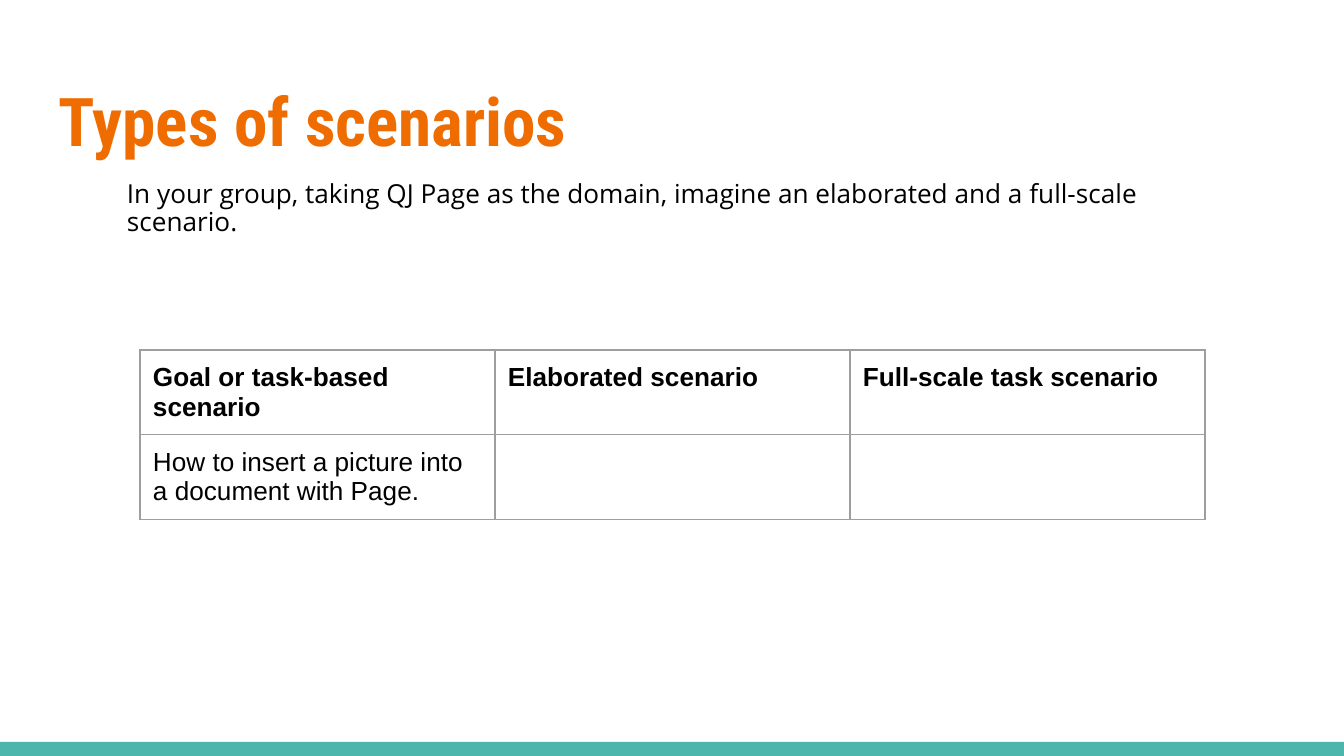
"""Build the slide on types of scenarios."""
from dataclasses import dataclass

from lxml.etree import SubElement
from pptx import Presentation
from pptx.dml.color import RGBColor
from pptx.enum.shapes import MSO_SHAPE
from pptx.enum.text import MSO_ANCHOR, MSO_AUTO_SIZE, PP_ALIGN
from pptx.oxml.ns import qn
from pptx.slide import Slide
from pptx.text.text import TextFrame
from pptx.util import Emu, Pt

ORANGE = RGBColor(0xEF, 0x6C, 0x00)
TEAL = RGBColor(0x4D, 0xB6, 0xAC)
BLACK = RGBColor(0x00, 0x00, 0x00)
GREY = RGBColor(0x9E, 0x9E, 0x9E)
PX_PER_INCH = 134.4
INSET = 13
COLUMN_WIDTH = 355
ROW_HEIGHT = 56
ROWS = (
    ("Goal or task-based scenario", "Elaborated scenario", "Full-scale task scenario"),
    ("How to insert a picture into a document with Page.", "", ""),
)


@dataclass(frozen=True)
class Box:
    left: int
    top: int
    width: int
    height: int

    def emu(self) -> tuple[Emu, Emu, Emu, Emu]:
        return px(self.left), px(self.top), px(self.width), px(self.height)


@dataclass(frozen=True)
class Style:
    font: str
    size: int
    color: RGBColor
    bold: bool = False
    spacing: float = 1.0


TITLE_STYLE = Style("Roboto Condensed", 36, ORANGE, bold=True)
TASK_STYLE = Style("Open Sans", 14, BLACK, spacing=0.9)
HEADER_STYLE = Style("Arial", 14, BLACK, bold=True)
CELL_STYLE = Style("Arial", 14, BLACK)


def px(length: int) -> Emu:
    return Emu(round(length * 914400 / PX_PER_INCH))


def write(frame: TextFrame, text: str, style: Style) -> None:
    frame.text = text
    frame.word_wrap = True
    for para in frame.paragraphs:
        para.alignment = PP_ALIGN.LEFT
        para.line_spacing = style.spacing
        para.font.size = Pt(style.size)
        for span in para.runs:
            span.font.name = style.font
            span.font.size = Pt(style.size)
            span.font.bold = style.bold
            span.font.color.rgb = style.color


def set_insets(target) -> None:
    target.margin_left = target.margin_right = px(INSET)
    target.margin_top = target.margin_bottom = px(INSET)
    target.vertical_anchor = MSO_ANCHOR.TOP


def add_bar(page: Slide, box: Box) -> None:
    bar = page.shapes.add_shape(MSO_SHAPE.RECTANGLE, *box.emu())
    bar.shadow.inherit = False
    bar.fill.solid()
    bar.fill.fore_color.rgb = TEAL
    bar.line.fill.background()


def add_title(page: Slide, box: Box, text: str) -> None:
    title = page.shapes.title
    title.left, title.top, title.width, title.height = box.emu()
    write(title.text_frame, text, TITLE_STYLE)
    title.text_frame.auto_size = MSO_AUTO_SIZE.NONE
    set_insets(title.text_frame)


def add_task(page: Slide, box: Box, text: str) -> None:
    task = page.shapes.add_textbox(*box.emu())
    write(task.text_frame, text, TASK_STYLE)
    set_insets(task.text_frame)


def add_borders(cell) -> None:
    properties = cell._tc.get_or_add_tcPr()
    for index, side in enumerate(("lnL", "lnR", "lnT", "lnB")):
        line = SubElement(properties, qn(f"a:{side}"), w=str(Pt(0.75)))
        fill = SubElement(line, qn("a:solidFill"))
        SubElement(fill, qn("a:srgbClr"), val=str(GREY))
        properties.insert(index, line)


def add_scenarios(page: Slide, left: int, top: int) -> None:
    columns = len(ROWS[0])
    box = Box(left, top, columns * COLUMN_WIDTH, len(ROWS) * ROW_HEIGHT)
    table = page.shapes.add_table(len(ROWS), columns, *box.emu()).table
    table.first_row = table.horz_banding = False
    for row, texts in enumerate(ROWS):
        for column, text in enumerate(texts):
            cell = table.cell(row, column)
            write(cell.text_frame, text, CELL_STYLE if row else HEADER_STYLE)
            set_insets(cell)
            cell.fill.background()
            add_borders(cell)


def main() -> None:
    deck = Presentation()
    deck.slide_width, deck.slide_height = px(1344), px(756)
    page = deck.slides.add_slide(deck.slide_layouts[5])
    add_bar(page, Box(0, 742, 1344, 14))
    add_title(page, Box(46, 66, 1252, 103), "Types of scenarios")
    add_scenarios(page, 140, 350)
    add_task(
        page,
        Box(114, 168, 1039, 103),
        "In your group, taking QJ Page as the domain, "
        "imagine an elaborated and a full-scale scenario.",
    )
    deck.save("out.pptx")


if __name__ == "__main__":
    main()
